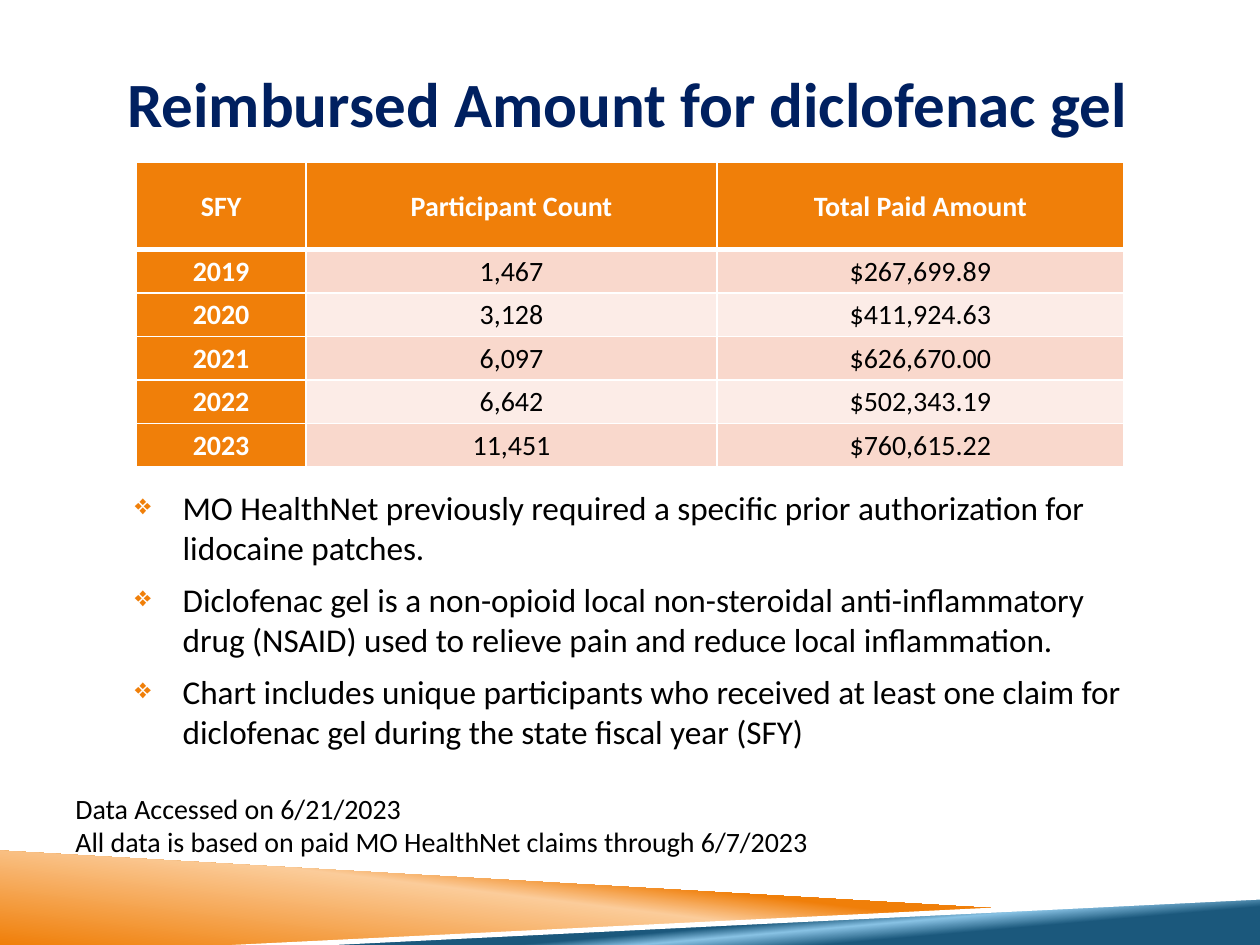
from dataclasses import dataclass
from copy import deepcopy

from lxml.etree import SubElement
from pptx import Presentation
from pptx.dml.color import RGBColor
from pptx.enum.text import MSO_ANCHOR, PP_ALIGN
from pptx.oxml.ns import qn
from pptx.util import Emu, Inches, Pt

WHITE = RGBColor(0xFF, 0xFF, 0xFF)
BLACK = RGBColor(0x00, 0x00, 0x00)
NAVY = RGBColor(0x00, 0x20, 0x60)
ORANGE = RGBColor(0xF0, 0x7F, 0x09)
PEACH = RGBColor(0xFB, 0xCC, 0x9A)
TEAL = RGBColor(0x1B, 0x58, 0x7C)
SKY = RGBColor(0x89, 0xC3, 0xE5)
ROSE = RGBColor(0xF9, 0xD8, 0xCC)
BLUSH = RGBColor(0xFC, 0xEC, 0xE7)

GRID_COLUMNS, GRID_ROWS = 100, 75
SLIDE_WIDTH, SLIDE_HEIGHT = Inches(10), Inches(7.5)
HANGING = Inches(0.38)

FLUSH = {"margin_left": 0, "margin_right": 0, "word_wrap": True}
CELL_FORMAT = {
    "margin_left": Inches(0.01), "margin_right": Inches(0.01),
    "margin_top": Inches(0.01), "margin_bottom": 0,
    "vertical_anchor": MSO_ANCHOR.MIDDLE,
}


@dataclass(frozen=True)
class Area:
    """Place on the grid, in columns and rows."""
    left: float
    top: float
    width: float
    height: float

    def lengths(self) -> tuple:
        """Return left, top, width and height as slide lengths."""
        return across(self.left), down(self.top), across(self.width), down(self.height)


@dataclass(frozen=True)
class Ribbon:
    """Footer band: grid corners, colour stops and clockwise angle."""
    corners: tuple
    stops: tuple
    angle: int = 0


@dataclass(frozen=True)
class TextBlock:
    """Paragraphs with their area and format."""
    area: Area
    lines: tuple
    font: dict
    frame: dict
    align: PP_ALIGN = PP_ALIGN.LEFT
    bulleted: bool = False


RIBBONS = (
    Ribbon(((0, 67.5), (79.2, 72.1), (20, 75), (0, 75)),
           ((0.0, ORANGE), (0.52, PEACH), (0.66, ORANGE)), 277),
    Ribbon(((19.8, 75), (100, 71.2), (100, 75)),
           ((0.28, TEAL), (0.4, SKY), (0.48, TEAL)), 265),
    Ribbon(((100, 71), (18.4, 75), (26.6, 75), (100, 71.4)), ((0.0, WHITE),)),
)

TEXT_BLOCKS = (
    TextBlock(Area(5, 62.3, 60.8, 6.4),
              ("Data Accessed on 6/21/2023",
               "All data is based on paid MO HealthNet claims through 6/7/2023"),
              {"size": Pt(16)}, {"word_wrap": False}),
    TextBlock(Area(6.7, 3.3, 86.2, 9.6), ("Reimbursed Amount for diclofenac gel",),
              {"size": Pt(36), "bold": True, "color": NAVY},
              {**FLUSH, "vertical_anchor": MSO_ANCHOR.MIDDLE}, PP_ALIGN.CENTER),
    TextBlock(Area(10.7, 38.2, 78.3, 22),
              ("MO HealthNet previously required a specific prior authorization for lidocaine patches.",
               "Diclofenac gel is a non-opioid local non-steroidal anti-inflammatory drug (NSAID) "
               "used to relieve pain and reduce local inflammation.",
               "Chart includes unique participants who received at least one claim for "
               "diclofenac gel during the state fiscal year (SFY)"),
              {"size": Pt(19)}, FLUSH, bulleted=True),
)

CLAIMS_AREA = Area(10.8, 12.9, 78.4, 24.4)
CLAIMS_COLUMNS = (13.5, 32.6, 32.3)
HEADER_ROW, YEAR_ROW = 6.9, 3.45
CLAIMS = (
    ("SFY", "Participant Count", "Total Paid Amount"),
    ("2019", "1,467", "$267,699.89"),
    ("2020", "3,128", "$411,924.63"),
    ("2021", "6,097", "$626,670.00"),
    ("2022", "6,642", "$502,343.19"),
    ("2023", "11,451", "$760,615.22"),
)


def across(columns: float) -> Emu:
    """Turn grid columns into a slide length."""
    return Emu(round(SLIDE_WIDTH * columns / GRID_COLUMNS))


def down(rows: float) -> Emu:
    """Turn grid rows into a slide length."""
    return Emu(round(SLIDE_HEIGHT * rows / GRID_ROWS))


def apply_format(target, values: dict) -> None:
    """Set each named attribute on the target."""
    for attribute, setting in values.items():
        setattr(target, attribute, setting)


def write(paragraph, wording: str, font: dict, align: PP_ALIGN) -> None:
    """Fill a paragraph with formatted wording."""
    style = {"name": "Calibri", "color": BLACK, **font}
    colour = style.pop("color")
    paragraph.alignment = align
    lettering = paragraph.add_run()
    lettering.text = wording
    apply_format(lettering.font, style)
    lettering.font.color.rgb = colour


def add_bullet(paragraph) -> None:
    """Give a paragraph a hanging orange diamond."""
    properties = paragraph._p.get_or_add_pPr()
    properties.set("marL", str(HANGING))
    properties.set("indent", str(-HANGING))
    SubElement(SubElement(properties, qn("a:buClr")), qn("a:srgbClr"), val=str(ORANGE))
    SubElement(properties, qn("a:buSzPct"), val="85000")
    SubElement(properties, qn("a:buChar"), char="❖")


def draw_ribbon(slide, ribbon: Ribbon) -> None:
    """Draw one footer band."""
    start, *rest = [(across(column), down(row)) for column, row in ribbon.corners]
    builder = slide.shapes.build_freeform(*start)
    builder.add_line_segments(rest, close=True)
    band = builder.convert_to_shape()
    band.shadow.inherit = False
    band.line.fill.background()
    if len(ribbon.stops) == 1:
        band.fill.solid()
        band.fill.fore_color.rgb = ribbon.stops[0][1]
        return
    band.fill.gradient()
    band.fill.gradient_angle = 360 - ribbon.angle
    stop_list = band._element.spPr.find(qn("a:gradFill")).find(qn("a:gsLst"))
    stop_list.append(deepcopy(stop_list[-1]))
    for stop, (position, colour) in zip(band.fill.gradient_stops, ribbon.stops):
        stop.position = position
        stop.color.rgb = colour


def draw_text(slide, block: TextBlock) -> None:
    """Draw one block of paragraphs."""
    frame = slide.shapes.add_textbox(*block.area.lengths()).text_frame
    apply_format(frame, block.frame)
    for index, wording in enumerate(block.lines):
        paragraph = frame.add_paragraph() if index else frame.paragraphs[0]
        if block.bulleted:
            add_bullet(paragraph)
            if index:
                paragraph.space_before = Pt(7)
        write(paragraph, wording, block.font, block.align)


def add_borders(cell, bottom_width: int) -> None:
    """Outline a cell in white."""
    properties = cell._tc.get_or_add_tcPr()
    for side, width in (("L", 1), ("R", 1), ("T", 1), ("B", bottom_width)):
        edge = SubElement(properties, qn(f"a:ln{side}"), w=str(Pt(width)))
        SubElement(SubElement(edge, qn("a:solidFill")), qn("a:srgbClr"), val=str(WHITE))


def draw_claims(slide) -> None:
    """Draw the table of yearly claims."""
    claims = slide.shapes.add_table(
        len(CLAIMS), len(CLAIMS_COLUMNS), *CLAIMS_AREA.lengths()).table
    for column, width in zip(claims.columns, CLAIMS_COLUMNS):
        column.width = across(width)
    for row_index, record in enumerate(CLAIMS):
        claims.rows[row_index].height = down(YEAR_ROW if row_index else HEADER_ROW)
        for column_index, wording in enumerate(record):
            cell = claims.cell(row_index, column_index)
            heading = row_index == 0 or column_index == 0
            apply_format(cell, CELL_FORMAT)
            add_borders(cell, 1 if row_index else 3)
            cell.fill.solid()
            cell.fill.fore_color.rgb = ORANGE if heading else ROSE if row_index % 2 else BLUSH
            write(cell.text_frame.paragraphs[0], wording,
                  {"size": Pt(16), "bold": heading, "color": WHITE if heading else BLACK},
                  PP_ALIGN.CENTER)


def main() -> None:
    """Build and save the slide."""
    deck = Presentation()
    apply_format(deck, {"slide_width": SLIDE_WIDTH, "slide_height": SLIDE_HEIGHT})
    slide = deck.slides.add_slide(deck.slide_layouts[6])
    for ribbon in RIBBONS:
        draw_ribbon(slide, ribbon)
    draw_claims(slide)
    for block in TEXT_BLOCKS:
        draw_text(slide, block)
    deck.save("out.pptx")


if __name__ == "__main__":
    main()
